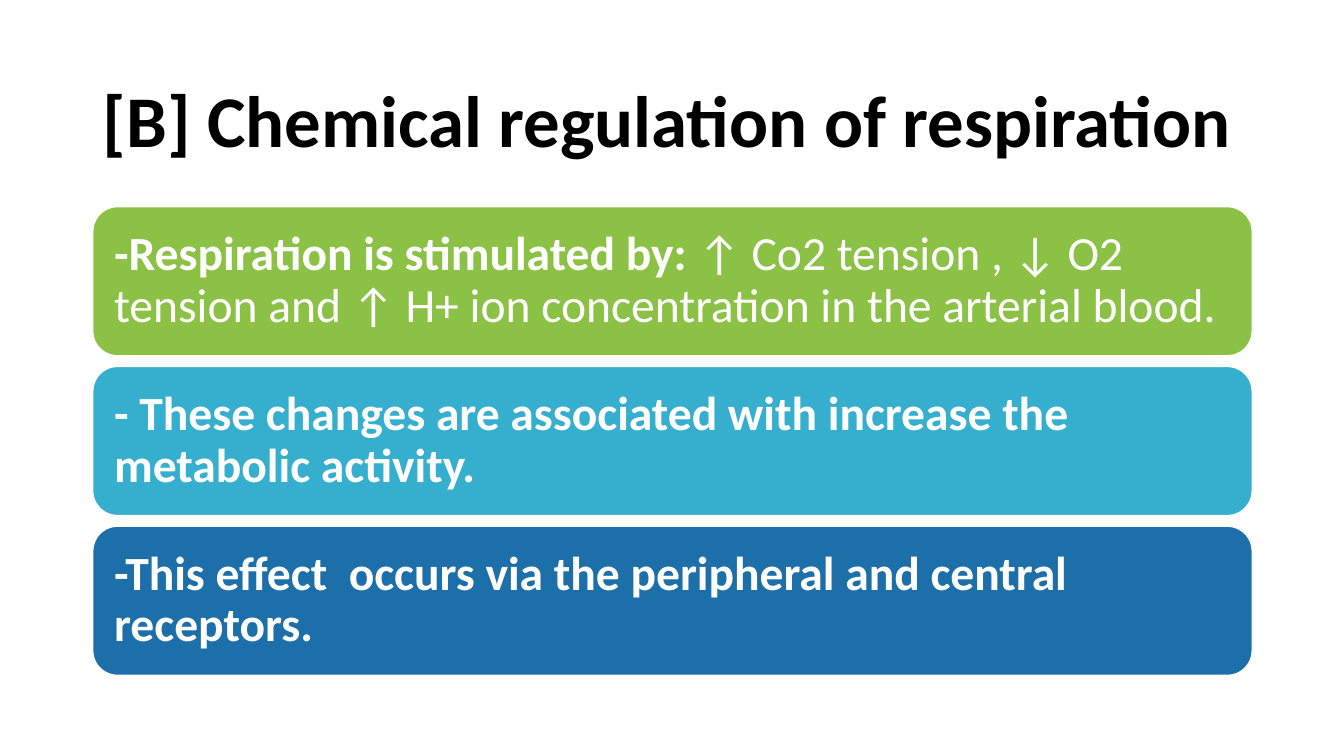
from dataclasses import dataclass

from pptx import Presentation
from pptx.dml.color import RGBColor
from pptx.enum.shapes import MSO_SHAPE
from pptx.enum.text import MSO_ANCHOR, MSO_AUTO_SIZE, PP_ALIGN
from pptx.util import Inches, Pt

ROUNDED = MSO_SHAPE.ROUNDED_RECTANGLE
MIDDLE = MSO_ANCHOR.MIDDLE
LEFT = PP_ALIGN.LEFT
NO_AUTOFIT = MSO_AUTO_SIZE.NONE
TITLE_ONLY = 5


@dataclass(frozen=True)
class Theme:
    font: str = "Calibri"
    title_size: int = 52
    card_size: int = 34
    ink: str = "000000"
    paper: str = "FFFFFF"
    cards: tuple = ("8BC145", "36AFCE", "1D6FA9")


THEME = Theme()
CONTENT_LEFT, CONTENT_WIDTH = 0.92, 11.5
CARDS_TOP, CARD_HEIGHT, CARD_PITCH = 2.05, 1.48, 1.585
CARD_INSET = 0.21

TITLE = "[B] Chemical regulation of respiration"
# Each statement is a list of (text, bold) pairs.
STATEMENTS = [
    [("-Respiration is stimulated by: ", True),
     ("↑ Co2 tension , ↓ O2 tension and ↑ H+ ion concentration "
      "in the arterial blood.", False)],
    [("- These changes are associated with increase the metabolic activity.", True)],
    [("-This effect  occurs via the peripheral and central receptors.", True)],
]


def write_text(frame, parts, *, size, color, inset_x=0.1, inset_y=0.05):
    """Fill a frame with one paragraph made of (text, bold) parts."""
    frame.word_wrap = True
    frame.auto_size = NO_AUTOFIT
    frame.vertical_anchor = MIDDLE
    frame.margin_left = frame.margin_right = Inches(inset_x)
    frame.margin_top = frame.margin_bottom = Inches(inset_y)
    paragraph = frame.paragraphs[0]
    paragraph.alignment = LEFT
    paragraph.line_spacing = 0.9
    for text, bold in parts:
        run = paragraph.add_run()
        run.text = text
        run.font.name = THEME.font
        run.font.size = Pt(size)
        run.font.bold = bold
        run.font.color.rgb = RGBColor.from_string(color)


def add_title(slide, text):
    title = slide.shapes.title
    title.left, title.top = Inches(CONTENT_LEFT), Inches(0.61)
    title.width, title.height = Inches(CONTENT_WIDTH), Inches(1.24)
    write_text(title.text_frame, [(text, True)],
               size=THEME.title_size, color=THEME.ink)


def add_card(slide, top, statement, fill):
    card = slide.shapes.add_shape(
        ROUNDED, Inches(CONTENT_LEFT), Inches(top),
        Inches(CONTENT_WIDTH), Inches(CARD_HEIGHT))
    card.shadow.inherit = False
    card.fill.solid()
    card.fill.fore_color.rgb = RGBColor.from_string(fill)
    card.line.color.rgb = RGBColor.from_string(THEME.paper)
    card.line.width = Pt(1)
    # The rounded corners already inset the text by about 0.07 inch.
    write_text(card.text_frame, statement, size=THEME.card_size,
               color=THEME.paper, inset_x=CARD_INSET - 0.07,
               inset_y=CARD_INSET - 0.07)


def main():
    presentation = Presentation()
    presentation.slide_width = Inches(13.33)
    presentation.slide_height = Inches(7.5)
    slide = presentation.slides.add_slide(presentation.slide_layouts[TITLE_ONLY])
    add_title(slide, TITLE)
    for row, (statement, fill) in enumerate(zip(STATEMENTS, THEME.cards)):
        add_card(slide, CARDS_TOP + row * CARD_PITCH, statement, fill)
    presentation.save("out.pptx")


if __name__ == "__main__":
    main()
